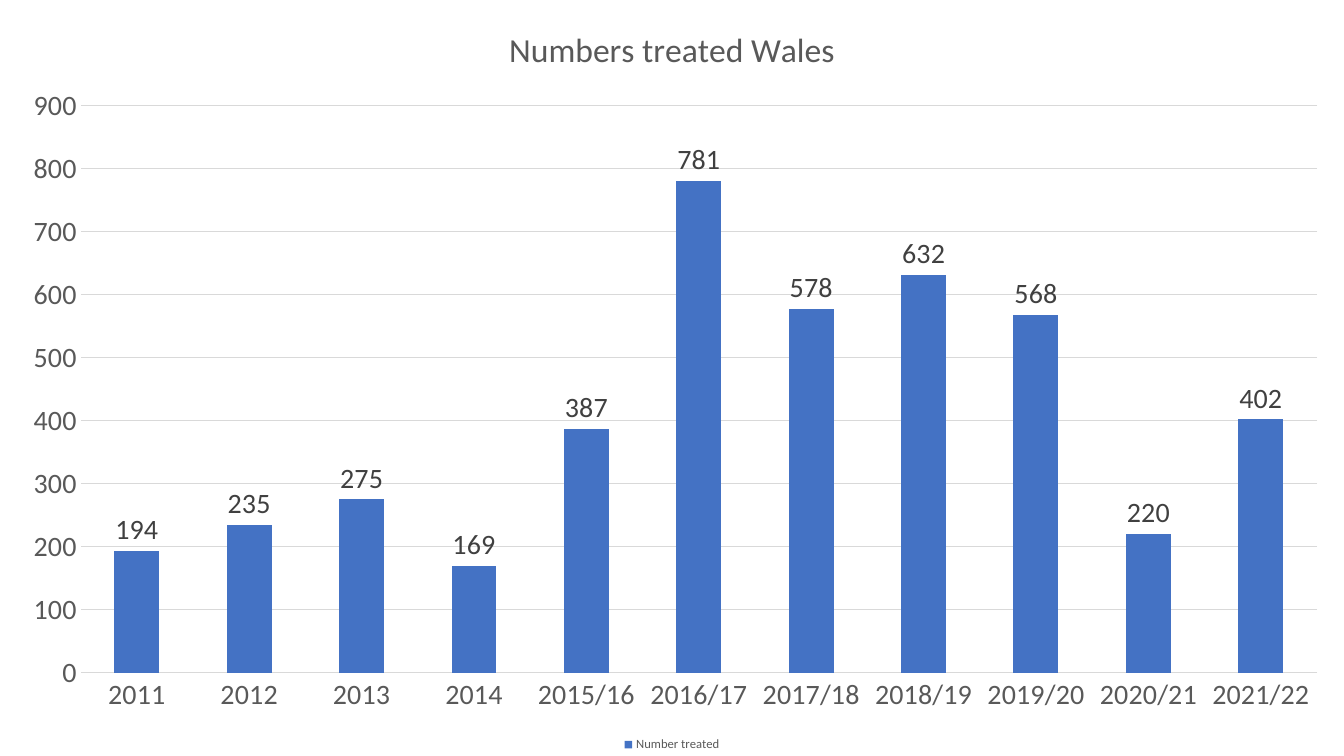
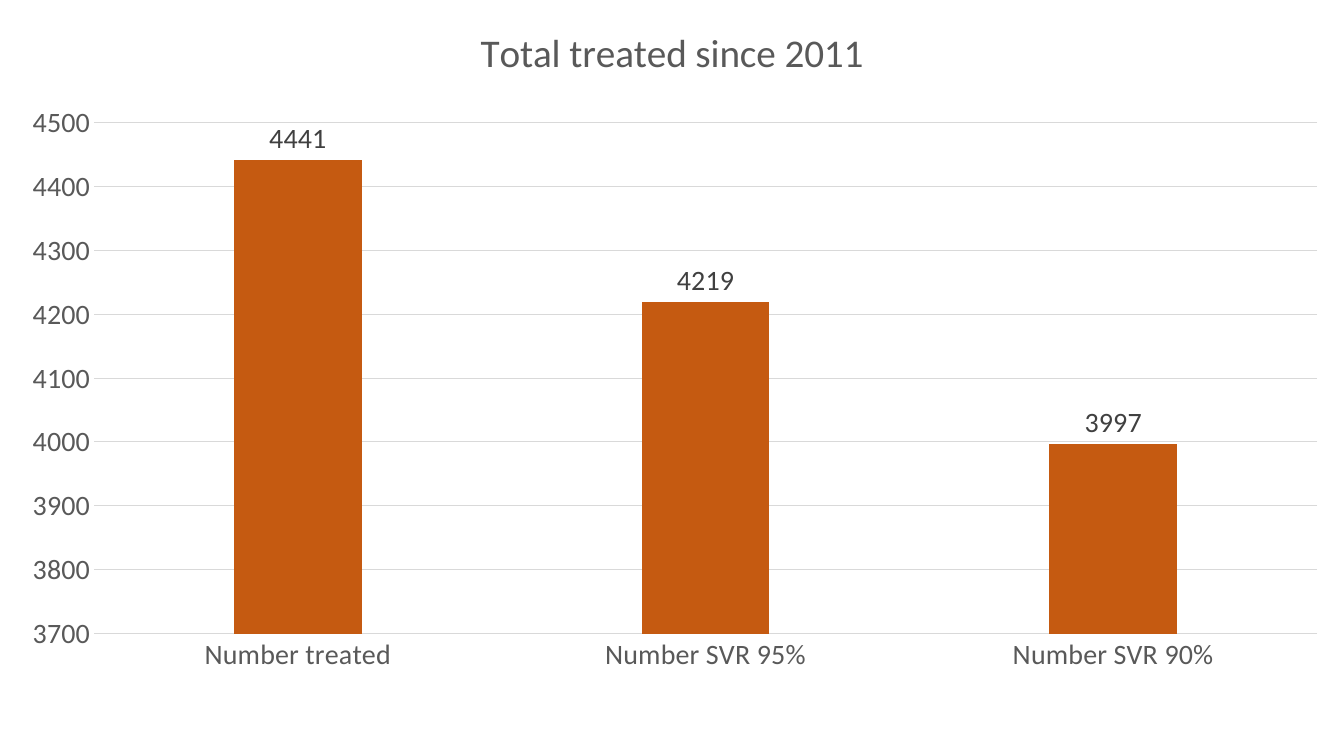
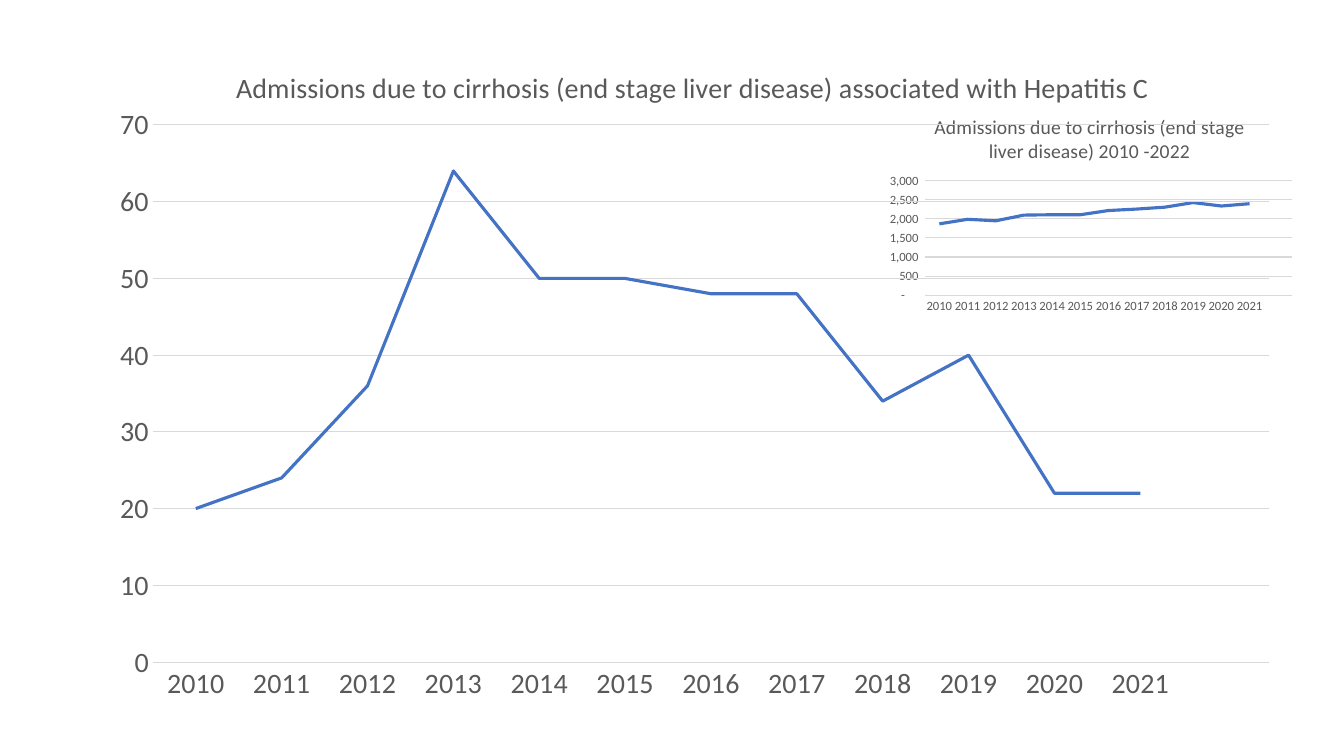
from dataclasses import dataclass

from lxml.etree import SubElement
from pptx import Presentation
from pptx.chart.data import CategoryChartData as Data
from pptx.dml.color import RGBColor as RGB
from pptx.enum.chart import XL_CHART_TYPE as Kind
from pptx.enum.chart import XL_LABEL_POSITION as Place
from pptx.enum.chart import XL_LEGEND_POSITION as Side
from pptx.enum.chart import XL_TICK_MARK as Tick
from pptx.oxml import parse_xml
from pptx.oxml.ns import nsdecls, qn
from pptx.util import Cm, Pt


@dataclass(frozen=True)
class Theme:
    font: str = "Calibri"
    text: str = "595959"
    label: str = "404040"
    grid: str = "D9D9D9"
    blue: str = "4472C4"
    rust: str = "C55A11"
    huge: int = 28
    large: int = 24
    body: int = 20
    small: int = 14
    tiny: int = 9
    thin: float = 0.75
    thick: float = 2.25


LOOK = Theme()
WIDE, HIGH = 33.87, 19.05


def style(font, size, color=LOOK.text):
    font.name = LOOK.font
    font.size = Pt(size)
    font.bold = False
    font.color.rgb = RGB.from_string(color)


def write(frame, text, size=LOOK.body, color=LOOK.text):
    frame.text = text
    style(frame.paragraphs[0].runs[0].font, size, color)


def stroke(line, color, width):
    line.color.rgb = RGB.from_string(color)
    line.width = Pt(width)


def clear(chart):
    chart.element.find(qn("c:chart")).addnext(parse_xml(
        f"<c:spPr {nsdecls('c', 'a')}><a:noFill/>"
        "<a:ln><a:noFill/></a:ln></c:spPr>"))


def locate(part, index, spot, inner=False):
    for old in part.findall(qn("c:layout")):
        part.remove(old)
    layout = parse_xml(f"<c:layout {nsdecls('c')}/>")
    part.insert(index, layout)
    manual = SubElement(layout, qn("c:manualLayout"))
    pairs = [("layoutTarget", "inner")] if inner else []
    pairs += [("xMode", "edge"), ("yMode", "edge")]
    pairs += zip("xywh", spot)
    for name, value in pairs:
        SubElement(manual, qn(f"c:{name}")).set("val", str(value))


class Deck:
    def __init__(self, look):
        self.look = look
        self.file = Presentation()
        self.file.slide_width = Cm(WIDE)
        self.file.slide_height = Cm(HIGH)
        self.page = None

    def slide(self):
        self.page = self.file.slides.add_slide(self.file.slide_layouts[6])

    def chart(self, kind, box, title, name, cats, vals, plot, head, size):
        data = Data()
        data.categories = cats
        data.add_series(name, vals)
        chart = self.page.shapes.add_chart(
            kind, *map(Cm, box), data).chart
        style(chart.font, size)
        clear(chart)
        chart.has_legend = False
        chart.has_title = True
        write(chart.chart_title.text_frame, title, size=head)
        chart.chart_title.include_in_layout = False
        locate(chart.element.find(".//" + qn("c:plotArea")), 0, plot, True)
        self.axes(chart, size)
        chart.plots[0].vary_by_categories = False
        return chart

    def axes(self, chart, size):
        for axis in (chart.category_axis, chart.value_axis):
            axis.major_tick_mark = axis.minor_tick_mark = Tick.NONE
            style(axis.tick_labels.font, size)
        stroke(chart.category_axis.format.line, self.look.grid, self.look.thin)
        value = chart.value_axis
        value.format.line.fill.background()
        value.has_major_gridlines = True
        stroke(value.major_gridlines.format.line, self.look.grid,
               self.look.thin)

    def scale(self, chart, low, high, step, form="General"):
        axis = chart.value_axis
        axis.minimum_scale, axis.maximum_scale = low, high
        axis.major_unit = step
        axis.tick_labels.number_format = form
        axis.tick_labels.number_format_is_linked = False

    def bars(self, *args, color, gap, lap=0, **more):
        chart = self.chart(Kind.COLUMN_CLUSTERED, *args, **more)
        plot = chart.plots[0]
        plot.gap_width, plot.overlap = gap, lap
        fill = plot.series[0].format.fill
        fill.solid()
        fill.fore_color.rgb = RGB.from_string(color)
        plot.has_data_labels = True
        tags = plot.data_labels
        tags.show_value = True
        tags.position = Place.OUTSIDE_END
        style(tags.font, self.look.body, self.look.label)
        return chart

    def line(self, *args, **more):
        chart = self.chart(Kind.LINE, *args, **more)
        series = chart.plots[0].series[0]
        series.smooth = False
        stroke(series.format.line, self.look.blue, self.look.thick)
        return chart

    def legend(self, chart):
        chart.has_legend = True
        chart.legend.position = Side.BOTTOM
        chart.legend.include_in_layout = False
        style(chart.legend.font, self.look.tiny)


def treated(deck):
    deck.slide()
    years = [str(year) for year in range(2011, 2015)]
    years += [f"{year}/{year % 100 + 1}" for year in range(2015, 2022)]
    chart = deck.bars(
        (0, 0, WIDE, HIGH), "Numbers treated Wales", "Number treated", years,
        (194, 235, 275, 169, 387, 781, 578, 632, 568, 220, 402),
        plot=(0.06, 0.14, 0.92, 0.75), head=LOOK.large, size=LOOK.body,
        color=LOOK.blue, gap=150)
    chart.category_axis.format.line.fill.background()
    deck.scale(chart, 0, 900, 100)
    deck.legend(chart)


def totals(deck):
    deck.slide()
    chart = deck.bars(
        (0, 0, WIDE, 17.17), "Total treated since 2011", "Series 1",
        ("Number treated", "Number SVR 95%", "Number SVR 90%"),
        (4441, 4219, 3997),
        plot=(0.07, 0.18, 0.91, 0.75), head=LOOK.huge, size=LOOK.body,
        color=LOOK.rust, gap=219, lap=-27)
    deck.scale(chart, 3700, 4500, 100, "0")


def stays(deck):
    deck.slide()
    years = [str(year) for year in range(2010, 2022)] + [""]
    cause = "Admissions due to cirrhosis (end stage liver disease)"
    every = f"{cause} 2010 -2022"
    inset = deck.line(
        (22.15, 2.51, 10.62, 5.54), every, every, years,
        (1870, 1990, 1950, 2100, 2110, 2110,
         2220, 2260, 2310, 2430, 2340, 2400, None),
        plot=(0.11, 0.37, 0.87, 0.52), head=LOOK.small, size=LOOK.tiny)
    deck.scale(inset, 0, 3000, 500,
               '_-* #,##0_-;\\-* #,##0_-;_-* "-"??_-;_-@_')
    main = deck.line(
        (2.34, 1.12, 30.25, 16.92), f"{cause} associated with Hepatitis C",
        "Series 1", years,
        (20, 24, 36, 64, 50, 50, 48, 48, 34, 40, 22, 22, None),
        plot=(0.05, 0.12, 0.93, 0.8), head=LOOK.body, size=LOOK.body)
    deck.scale(main, 0, 70, 10)


def main():
    deck = Deck(LOOK)
    for build in (treated, totals, stays):
        build(deck)
    deck.file.save("out.pptx")


if __name__ == "__main__":
    main()
